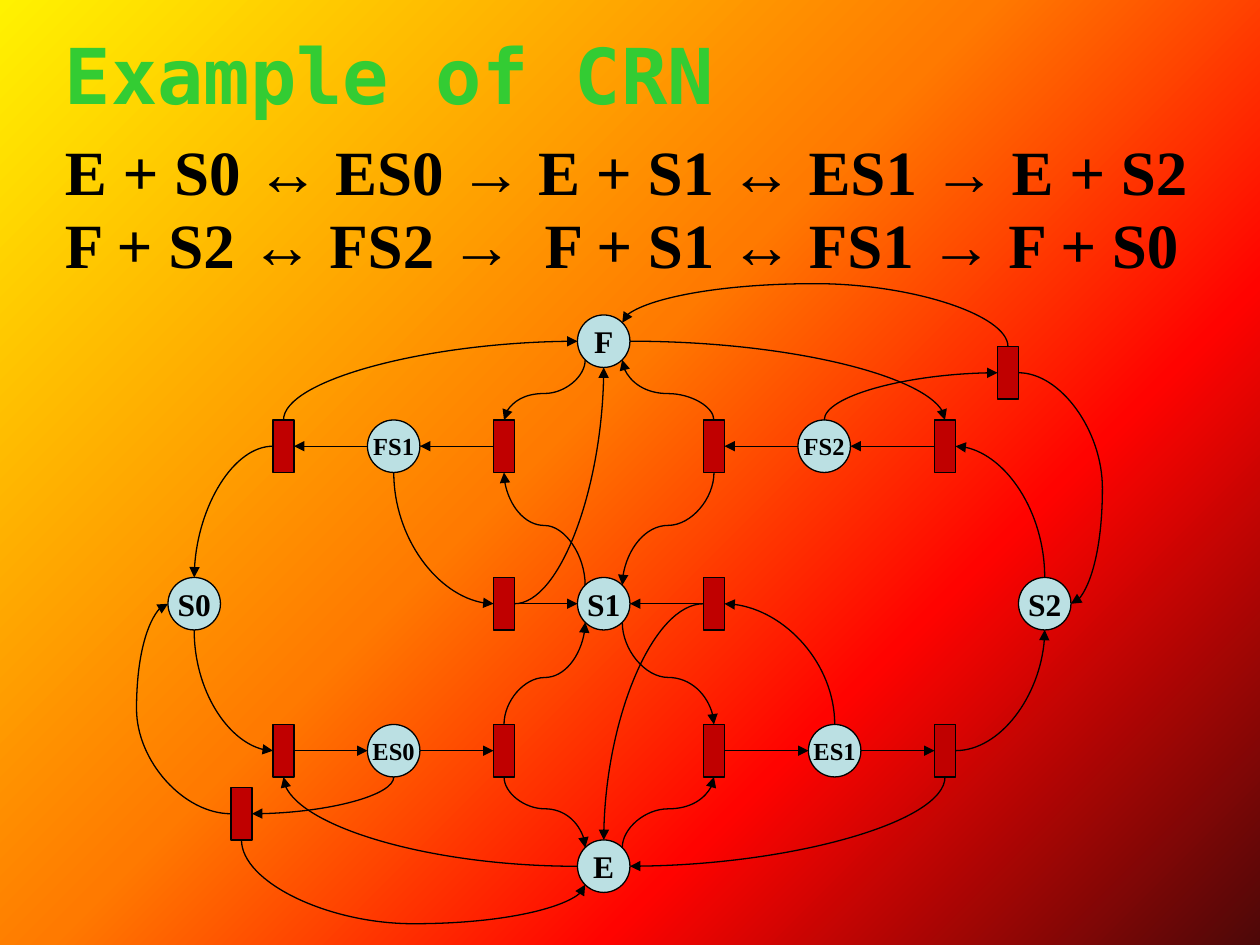
"""Build a slide showing a chemical reaction network as a graph."""
from copy import deepcopy
from math import sqrt

from lxml import etree
from pptx import Presentation
from pptx.dml.color import RGBColor
from pptx.enum.shapes import MSO_CONNECTOR, MSO_SHAPE
from pptx.enum.text import MSO_ANCHOR, MSO_AUTO_SIZE, PP_ALIGN
from pptx.oxml.ns import qn
from pptx.util import Pt

OVAL, BAR = MSO_SHAPE.OVAL, MSO_SHAPE.RECTANGLE
STRAIGHT, CURVE = MSO_CONNECTOR.STRAIGHT, MSO_CONNECTOR.CURVE
MIDDLE, CENTER, LEFT = MSO_ANCHOR.MIDDLE, PP_ALIGN.CENTER, PP_ALIGN.LEFT
GROW, FIXED = MSO_AUTO_SIZE.SHAPE_TO_FIT_TEXT, MSO_AUTO_SIZE.NONE

BLACK = RGBColor(0x00, 0x00, 0x00)
GREEN = RGBColor(0x33, 0xCC, 0x33)
PALE_BLUE = RGBColor(0xBB, 0xE0, 0xE3)
DARK_RED = RGBColor(0xC0, 0x00, 0x00)
BACKGROUND = [
    (0, RGBColor(0xFF, 0xF2, 0x00)),
    (0.45, RGBColor(0xFF, 0x7A, 0x00)),
    (0.7, RGBColor(0xFF, 0x03, 0x00)),
    (1, RGBColor(0x4D, 0x08, 0x08)),
]
SERIF, MONO = "Times New Roman", "DejaVu Sans Mono"

HEADINGS = [
    ("Example of CRN", (30, 12, 483, 60.5), True, MONO, 44, GREEN),
    ("E + S0 ↔ ES0 → E + S1 ↔ ES1 → E + S2", (30, 72, 658, 50.4), False, SERIF, 36, BLACK),
    ("F + S2 ↔ FS2 →  F + S1 ↔ FS1 → F + S0", (30, 114, 657, 50.4), False, SERIF, 36, BLACK),
]

SPECIES = {
    "S0": (111, 345), "F": (345, 195), "E": (345, 495),
    "FS2": (471, 255), "FS1": (225, 255), "ES1": (477, 429),
    "ES0": (225, 429), "S1": (345, 345), "S2": (597, 345),
}
REACTIONS = {
    "bind E S0": (162, 429), "split FS2": (408, 255), "bind F S1": (288, 255),
    "make S0": (162, 255), "make S2": (540, 429), "bind E S1": (408, 429),
    "split ES0": (288, 429), "bind F S2": (540, 255), "free S0": (138, 465),
    "free S2": (576, 213), "free F S1": (288, 345), "free E S1": (408, 345),
}

STRAIGHT_LINKS = [
    ("ES0", "R", "split ES0", "L"), ("bind E S0", "R", "ES0", "L"),
    ("bind E S1", "R", "ES1", "L"), ("ES1", "R", "make S2", "L"),
    ("FS1", "L", "make S0", "R"), ("bind F S1", "L", "FS1", "R"),
    ("FS2", "L", "split FS2", "R"), ("bind F S2", "L", "FS2", "R"),
    ("free F S1", "R", "S1", "L"), ("free E S1", "L", "S1", "R"),
]
ARC_LINKS = [
    ("S0", "B", "bind E S0", "L"), ("E", "L", "bind E S0", "B"),
    ("make S2", "R", "S2", "B"), ("make S2", "B", "E", "R"),
    ("make S0", "L", "S0", "T"), ("make S0", "T", "F", "L"),
    ("S2", "T", "bind F S2", "R"), ("F", "R", "bind F S2", "T"),
    ("ES0", "B", "free S0", "R"), ("FS2", "T", "free S2", "L"),
    ("FS1", "B", "free F S1", "L"), ("free F S1", "R", "F", "B"),
    ("ES1", "T", "free E S1", "R"), ("free E S1", "L", "E", "T"),
]
BENT_LINKS = [
    ("split ES0", "T", "S1", "BL", 0.46), ("split ES0", "B", "E", "TL", 0.45),
    ("S1", "BR", "bind E S1", "T", 0.54), ("E", "TR", "bind E S1", "B", 0.55),
    ("F", "BL", "bind F S1", "T", 0.56), ("S1", "TL", "bind F S1", "B", 0.53),
    ("split FS2", "B", "S1", "TR", 0.47), ("split FS2", "T", "F", "BR", 0.44),
    ("free S0", "L", "S0", "L", 1.5), ("free S0", "B", "E", "BL", 1.87),
    ("free S2", "R", "S2", "R", 1.6), ("free S2", "T", "F", "TR", 2.64),
]

OVAL_SIZE, BAR_SIZE = (30, 30), (12, 30)
OVAL_SITES = ["T", "TL", "L", "BL", "B", "BR", "R", "TR"]
BAR_SITES = ["T", "L", "B", "R"]


def write(box, text, font, size, color, align, wrap, fit):
    """Put one bold run of text into a box."""
    frame = box.text_frame
    frame.word_wrap, frame.auto_size = wrap, fit
    para = frame.paragraphs[0]
    para.alignment = align
    span = para.add_run()
    span.text = text
    for name, value in {"name": font, "size": Pt(size), "bold": True}.items():
        setattr(span.font, name, value)
    span.font.color.rgb = color


def paint_background(page):
    """Fill the page with the diagonal gradient."""
    fill = page.background.fill
    fill.gradient()
    fill.gradient_angle = 315
    stops = next(page.element.iter(qn("a:gsLst")))
    while len(stops) < len(BACKGROUND):
        stops.append(deepcopy(stops[0]))
    for stop, (position, color) in zip(fill.gradient_stops, BACKGROUND):
        stop.position = position
        stop.color.rgb = color


def outline(item):
    """Give a shape or link a thin black line."""
    item.line.color.rgb = BLACK
    item.line.width = Pt(0.75)


def add_node(page, kind, center, size, color):
    """Add a filled shape around a centre point."""
    (x, y), (width, height) = center, size
    node = page.shapes.add_shape(
        kind, Pt(x - width / 2), Pt(y - height / 2), Pt(width), Pt(height))
    node.shadow.inherit = False
    node.fill.solid()
    node.fill.fore_color.rgb = color
    outline(node)
    return node


def site_point(name, side):
    """Return the point where a link meets a node."""
    x, y = SPECIES.get(name) or REACTIONS[name]
    width, height = OVAL_SIZE if name in SPECIES else BAR_SIZE
    reach = 1 / sqrt(2) if len(side) == 2 else 1
    across = ("R" in side) - ("L" in side)
    down = ("B" in side) - ("T" in side)
    return x + across * reach * width / 2, y + down * reach * height / 2


def shape_curve(link, start, end, sideways, bend):
    """Turn and size a curved link so that it leaves its node squarely."""
    dx, dy = end[0] - start[0], end[1] - start[1]
    if sideways:
        width, height = abs(dx), abs(dy)
        turn, flip, flipped = (0 if dx > 0 else 180), "flipV", dx * dy < 0
    else:
        width, height = abs(dy), abs(dx)
        turn, flip, flipped = (270 if dx > 0 else 90), "flipH", dx * dy > 0
    frame = link.element.spPr.find(qn("a:xfrm"))
    frame.attrib.clear()
    frame.set("rot", str(turn * 60000))
    if flipped:
        frame.set(flip, "1")
    link.left = Pt((start[0] + end[0] - width) / 2)
    link.top = Pt((start[1] + end[1] - height) / 2)
    link.width, link.height = Pt(width), Pt(height)
    preset = link.element.spPr.find(qn("a:prstGeom"))
    preset.set("prst", "curvedConnector3" if bend else "curvedConnector2")
    if bend:
        guide = etree.SubElement(preset.find(qn("a:avLst")), qn("a:gd"))
        guide.set("name", "adj1")
        guide.set("fmla", f"val {round(bend * 100000)}")


def add_link(page, nodes, kind, source, source_side, target, target_side, bend=None):
    """Add an arrow glued to two nodes."""
    ends = [(source, source_side), (target, target_side)]
    start, end = [site_point(*place) for place in ends]
    link = page.shapes.add_connector(kind, *[Pt(value) for value in start + end])
    outline(link)
    etree.SubElement(link.line._get_or_add_ln(), qn("a:tailEnd")).set("type", "triangle")
    etree.SubElement(link.element.spPr, qn("a:effectLst"))
    glue = next(link.element.iter(qn("p:cNvCxnSpPr")))
    for tag, (name, side) in zip(("a:stCxn", "a:endCxn"), ends):
        sites = OVAL_SITES if name in SPECIES else BAR_SITES
        joint = etree.SubElement(glue, qn(tag))
        joint.set("id", str(nodes[name].shape_id))
        joint.set("idx", str(sites.index(side)))
    if kind == CURVE:
        shape_curve(link, start, end, source_side in ("L", "R"), bend)


def main():
    """Build and save the deck."""
    deck = Presentation()
    deck.slide_width, deck.slide_height = Pt(720), Pt(540)
    page = deck.slides.add_slide(deck.slide_layouts[6])
    paint_background(page)
    for text, place, wrap, font, size, color in HEADINGS:
        box = page.shapes.add_textbox(*[Pt(value) for value in place])
        write(box, text, font, size, color, LEFT, wrap, GROW)
    nodes = {}
    for name, center in SPECIES.items():
        nodes[name] = add_node(page, OVAL, center, OVAL_SIZE, PALE_BLUE)
        nodes[name].text_frame.vertical_anchor = MIDDLE
        size = 14 if len(name) == 3 else 18
        write(nodes[name], name, SERIF, size, BLACK, CENTER, False, FIXED)
    for name, center in REACTIONS.items():
        nodes[name] = add_node(page, BAR, center, BAR_SIZE, DARK_RED)
    for kind, links in ((STRAIGHT, STRAIGHT_LINKS), (CURVE, ARC_LINKS + BENT_LINKS)):
        for link in links:
            add_link(page, nodes, kind, *link)
    deck.save("out.pptx")


if __name__ == "__main__":
    main()
